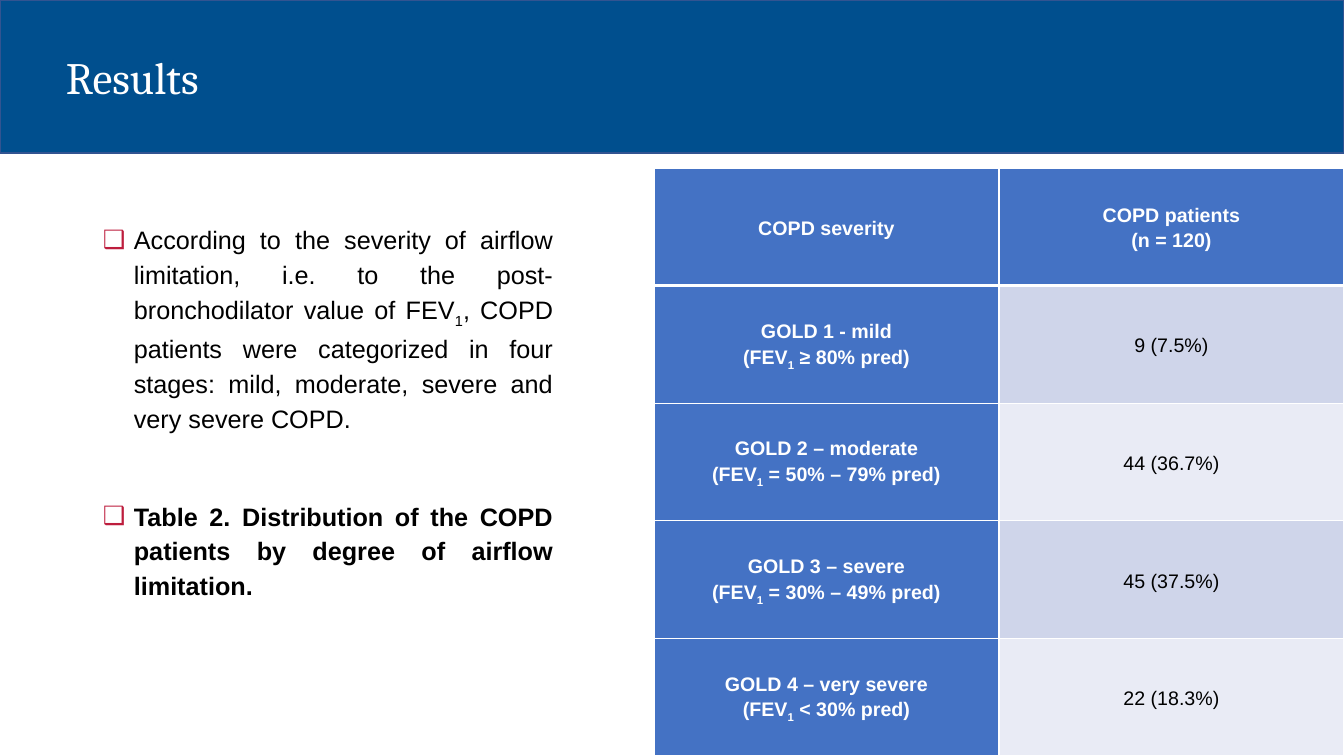
from lxml import etree
from pptx import Presentation
from pptx.dml.color import RGBColor
from pptx.enum.shapes import MSO_SHAPE
from pptx.enum.text import MSO_ANCHOR, PP_ALIGN
from pptx.oxml.ns import qn
from pptx.util import Emu, Pt

RECTANGLE = MSO_SHAPE.RECTANGLE
TOP, MIDDLE = MSO_ANCHOR.TOP, MSO_ANCHOR.MIDDLE
LEFT, CENTER, JUSTIFY = PP_ALIGN.LEFT, PP_ALIGN.CENTER, PP_ALIGN.JUSTIFY

WHITE = RGBColor(0xFF, 0xFF, 0xFF)
BLACK = RGBColor(0x00, 0x00, 0x00)
NAVY = RGBColor(0x00, 0x4F, 0x8E)
NAVY_EDGE = RGBColor(0x32, 0x54, 0x91)
CRIMSON = RGBColor(0xBD, 0x1D, 0x3D)
BLUE = RGBColor(0x44, 0x72, 0xC4)
BANDS = (RGBColor(0xCF, 0xD5, 0xEA), RGBColor(0xE9, 0xEB, 0xF5))

SUBSCRIPT_TERM = "FEV1"

FINDINGS = (
    ("According to the severity of airflow limitation, i.e. to the "
     "post-bronchodilator value of FEV1, COPD patients were categorized in "
     "four stages: mild, moderate, severe and very severe COPD.", False),
    ("Table 2. Distribution of the COPD patients by degree of airflow "
     "limitation.", True),
)

SEVERITY_ROWS = (
    (("COPD severity",), ("COPD patients", "(n = 120)")),
    (("GOLD 1 - mild", "(FEV1 ≥ 80% pred)"), ("9 (7.5%)",)),
    (("GOLD 2 – moderate", "(FEV1 = 50% – 79% pred)"), ("44 (36.7%)",)),
    (("GOLD 3 – severe", "(FEV1 = 30% – 49% pred)"), ("45 (37.5%)",)),
    (("GOLD 4 – very severe", "(FEV1 < 30% pred)"), ("22 (18.3%)",)),
)


def px(length):
    return Emu(round(length * 914400 / 100.8))


class SlideBuilder:
    body_font = "Arial"
    title_font = "Cambria"
    line_spacing = 1.15

    def __init__(self, slide):
        self.slide = slide

    def banner(self, left, top, width, height):
        shape = self.slide.shapes.add_shape(
            RECTANGLE, px(left), px(top), px(width), px(height))
        shape.shadow.inherit = False
        shape.fill.solid()
        shape.fill.fore_color.rgb = NAVY
        shape.line.color.rgb = NAVY_EDGE
        shape.line.width = Pt(1)

    def text_frame(self, left, top, width, height, anchor):
        box = self.slide.shapes.add_textbox(
            px(left), px(top), px(width), px(height))
        frame = box.text_frame
        frame.word_wrap = True
        frame.vertical_anchor = anchor
        return frame

    def span(self, para, text, font, size, color, bold, subscript=False):
        run = para.add_run()
        run.text = text
        run.font.name = font
        run.font.size = Pt(size)
        run.font.color.rgb = color
        run.font.bold = bold
        if subscript:
            run._r.get_or_add_rPr().set("baseline", "-25000")

    def body_text(self, para, text, size, color, bold):
        before, term, after = text.partition(SUBSCRIPT_TERM)
        pieces = ((before + term[:-1], False), (term[-1:], True), (after, False))
        for piece, subscript in pieces:
            if piece:
                self.span(para, piece, self.body_font, size, color, bold, subscript)

    def title(self, text, left, top, width, height):
        para = self.text_frame(left, top, width, height, MIDDLE).paragraphs[0]
        para.alignment = LEFT
        para.line_spacing = 0.9
        self.span(para, text, self.title_font, 32, WHITE, False)

    def bullet(self, para, indent):
        properties = para._p.get_or_add_pPr()
        properties.set("marL", str(px(indent)))
        properties.set("indent", str(-px(indent)))
        color = etree.SubElement(properties, qn("a:buClr"))
        etree.SubElement(color, qn("a:srgbClr"), val=str(CRIMSON))
        etree.SubElement(properties, qn("a:buFont"), typeface="Arial")
        etree.SubElement(properties, qn("a:buChar"), char="❑")

    def bullets(self, items, left, top, width, height, gap):
        frame = self.text_frame(left, top, width, height, TOP)
        for index, (text, bold) in enumerate(items):
            para = frame.add_paragraph() if index else frame.paragraphs[0]
            self.bullet(para, 31)
            para.alignment = JUSTIFY
            para.line_spacing = self.line_spacing
            para.space_before = Pt(gap if index else 0)
            self.body_text(para, text, 18, BLACK, bold)

    def borders(self, cell, weights):
        properties = cell._tc.get_or_add_tcPr()
        for position, (side, weight) in enumerate(weights.items()):
            line = etree.Element(qn("a:ln" + side), w=str(Pt(weight)))
            fill = etree.SubElement(line, qn("a:solidFill"))
            etree.SubElement(fill, qn("a:srgbClr"), val=str(WHITE))
            properties.insert(position, line)

    def cell(self, cell, lines, fill, color, bold):
        cell.fill.solid()
        cell.fill.fore_color.rgb = fill
        cell.vertical_anchor = MIDDLE
        cell.margin_left = cell.margin_right = px(7)
        cell.margin_top = cell.margin_bottom = px(0)
        for index, text in enumerate(lines):
            frame = cell.text_frame
            para = frame.add_paragraph() if index else frame.paragraphs[0]
            para.alignment = CENTER
            para.line_spacing = self.line_spacing
            self.body_text(para, text, 14, color, bold)

    def table(self, rows, left, top, width, height):
        table = self.slide.shapes.add_table(
            len(rows), len(rows[0]), px(left), px(top), px(width), px(height)).table
        for row, entries in enumerate(rows):
            for column, lines in enumerate(entries):
                cell = table.cell(row, column)
                heading = row == 0 or column == 0
                fill = BLUE if heading else BANDS[(row - 1) % 2]
                self.cell(cell, lines, fill, WHITE if heading else BLACK, heading)
                self.borders(cell, {"L": 1, "R": 1,
                                    "T": 3 if row == 1 else 1,
                                    "B": 3 if row == 0 else 1})


def main():
    deck = Presentation()
    deck.slide_width, deck.slide_height = px(1344), px(756)
    page = SlideBuilder(deck.slides.add_slide(deck.slide_layouts[6]))
    page.banner(0, 0, 1344, 153)
    page.bullets(FINDINGS, 93, 215, 470, 400, 45)
    page.title("Results", 56, 42, 803, 77)
    page.table(SEVERITY_ROWS, 654, 168, 690, 588)
    deck.save("out.pptx")


if __name__ == "__main__":
    main()
